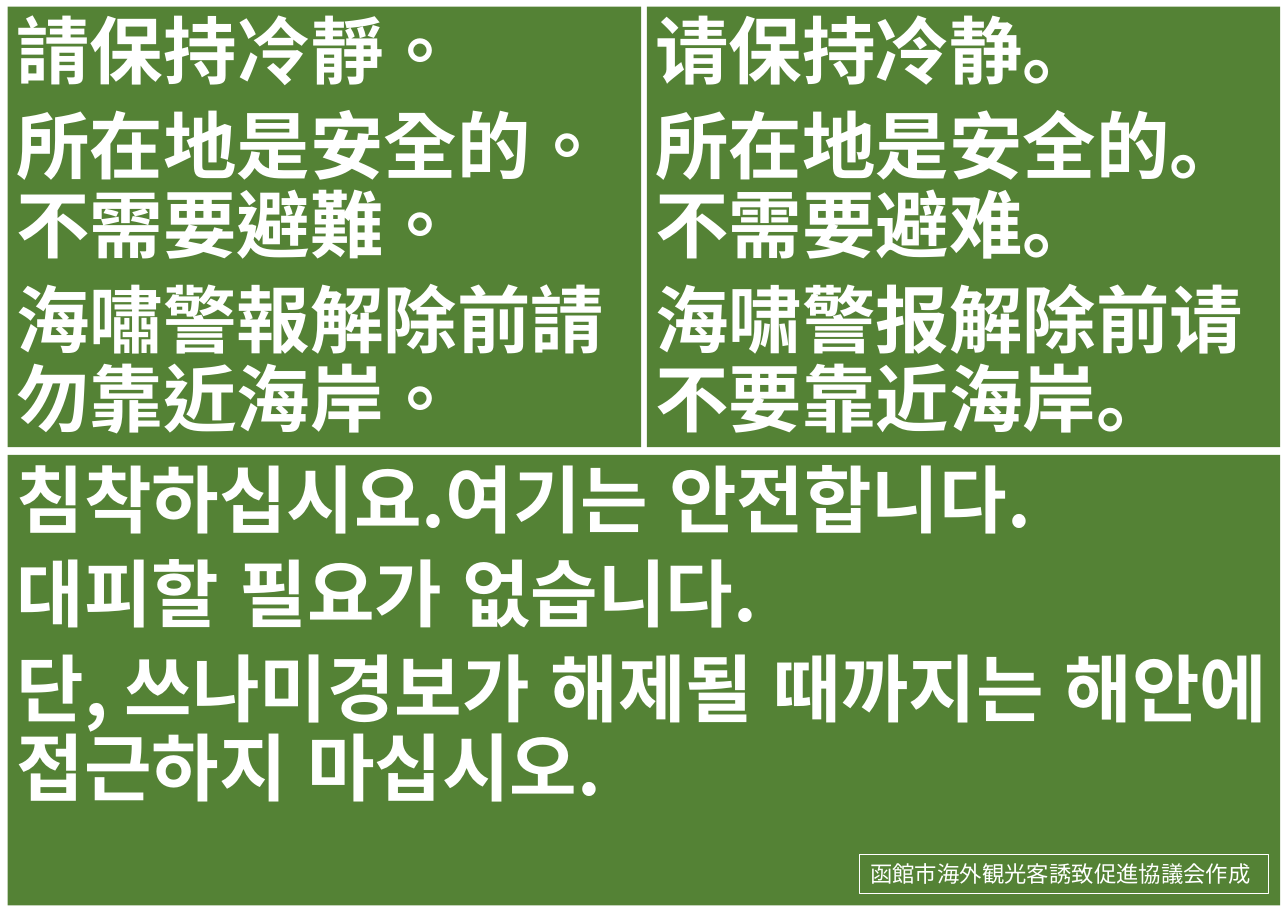
from lxml.etree import SubElement
from pptx import Presentation
from pptx.dml.color import RGBColor
from pptx.enum.lang import MSO_LANGUAGE_ID as LANG
from pptx.enum.shapes import MSO_SHAPE
from pptx.enum.text import MSO_ANCHOR, MSO_AUTO_SIZE, PP_ALIGN
from pptx.oxml.ns import qn
from pptx.util import Inches, Pt

HUES = {"green": "548235", "white": "FFFFFF"}
WIDE, HIGH = 11.69, 8.27
LEFT, TOP, GAP = 0.07, 0.06, 0.05
HALF, ROW = 5.75, 4.0
FULL = 2 * HALF + GAP

PANELS = [
    (0, 1, LANG.KOREAN, [
        "침착하십시요.여기는 안전합니다.",
        "대피할 필요가 없습니다.",
        "단, 쓰나미경보가 해제될 때까지는 해안에 접근하지 마십시오.",
    ]),
    (0, 0, LANG.CHINESE_HONG_KONG_SAR, [
        "請保持冷靜。",
        "所在地是安全的。不需要避難。",
        "海嘯警報解除前請勿靠近海岸。",
    ]),
    (1, 0, LANG.SIMPLIFIED_CHINESE, [
        "请保持冷静。",
        "所在地是安全的。不需要避难。",
        "海啸警报解除前请不要靠近海岸。",
    ]),
]
CREDIT = "函館市海外観光客誘致促進協議会作成"


def tint(name):
    return RGBColor.from_string(HUES[name])


def add_box(slide, place, lines, face, size, lang, bold=False):
    box = slide.shapes.add_shape(MSO_SHAPE.RECTANGLE, *map(Inches, place))
    box.shadow.inherit = False
    box.fill.solid()
    box.fill.fore_color.rgb = tint("green")
    box.line.fill.background()
    frame = box.text_frame
    frame.word_wrap = True
    frame.vertical_anchor = MSO_ANCHOR.TOP
    frame.text = "\n".join(lines)
    for para in frame.paragraphs:
        para.alignment = PP_ALIGN.LEFT
        for run in para.runs:
            font = run.font
            font.size, font.bold, font.name = Pt(size), bold, face
            font.color.rgb = tint("white")
            font.language_id = lang
            SubElement(font._element, qn("a:ea")).set("typeface", face)
    return box


def add_panel(slide, col, row, lang, lines):
    place = (LEFT + col * (HALF + GAP), TOP + row * (ROW + 0.07),
             FULL if row else HALF, ROW + 0.09 * row)
    box = add_box(slide, place, lines, "Noto Sans CJK JP", 48, lang, True)
    frame = box.text_frame
    frame.margin_left = frame.margin_right = frame.margin_top = Inches(0.08)
    frame.margin_bottom = Inches(0.04)
    for rank, para in enumerate(frame.paragraphs):
        para.line_spacing = 0.9
        para.space_before = Pt(10 if rank else 0)


def add_credit(slide):
    box = add_box(slide, (7.8, 7.76, 3.71, 0.35), [CREDIT], "Calibri", 14.6,
                  LANG.JAPANESE)
    box.line.color.rgb = tint("white")
    box.line.width = Pt(0.75)
    box.text_frame.auto_size = MSO_AUTO_SIZE.SHAPE_TO_FIT_TEXT


def main():
    deck = Presentation()
    deck.slide_width, deck.slide_height = Inches(WIDE), Inches(HIGH)
    slide = deck.slides.add_slide(deck.slide_layouts[6])
    for panel in PANELS:
        add_panel(slide, *panel)
    add_credit(slide)
    deck.save("out.pptx")


if __name__ == "__main__":
    main()
